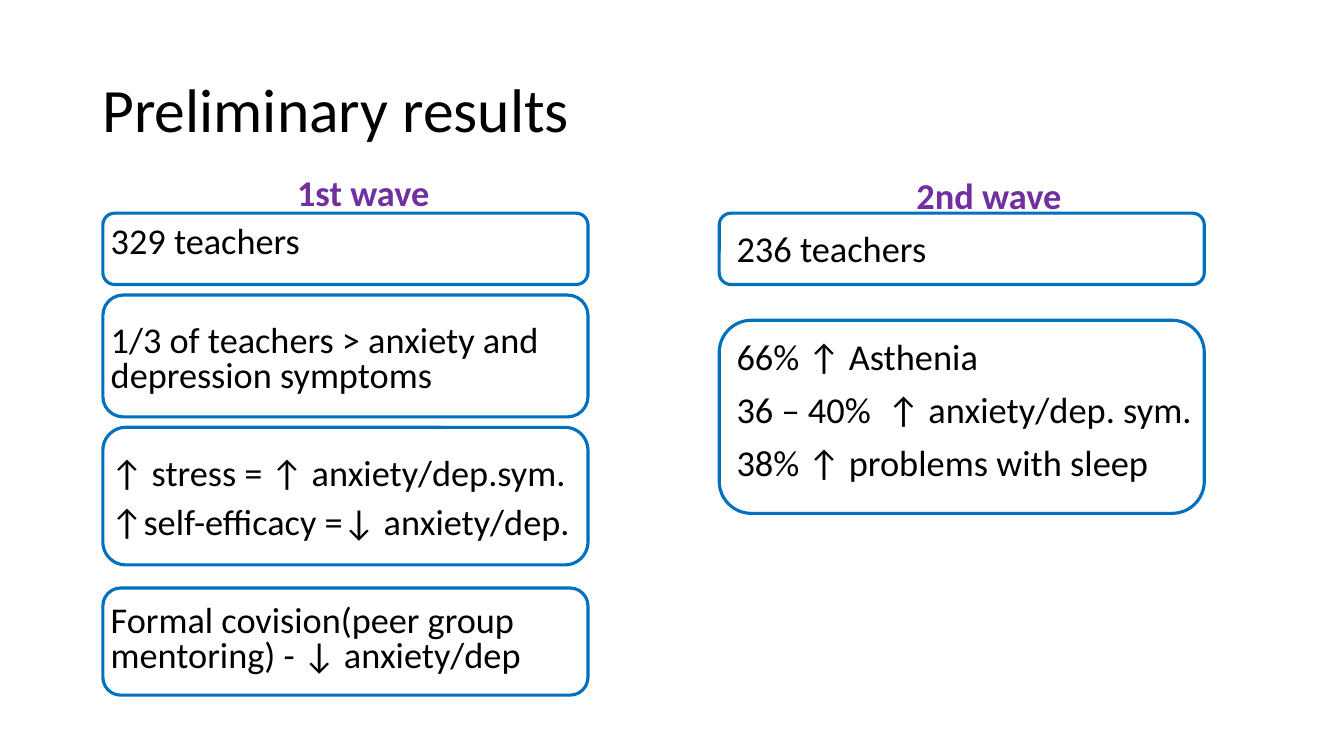
from dataclasses import dataclass

from pptx import Presentation
from pptx.dml.color import RGBColor
from pptx.enum.shapes import MSO_SHAPE
from pptx.enum.text import MSO_ANCHOR, MSO_AUTO_SIZE, PP_ALIGN
from pptx.slide import Slide
from pptx.text.text import TextFrame
from pptx.util import Emu, Pt

SCALE = 9525  # EMU in one px, at 96 px to the inch
FONT = "Calibri"
COLORS = {"ink": "000000", "wave": "7030A0", "frame": "0070C0"}
GAP = 10  # points above each line of text
FRAME_W = 462


@dataclass(frozen=True)
class Line:
    text: str
    group: bool = False  # opens a new group, set off by one line


@dataclass(frozen=True)
class Wave:
    title: str
    left: int
    high: int
    size: float
    pitch: float
    skip: float  # points above a new group
    lines: tuple[Line, ...]
    edge: int  # left side of the frames
    frames: tuple[tuple[int, int], ...]  # top and height


WAVES = (
    Wave("1st wave", 96, 519, 25.9, 0.8, 45.3, (
        Line("329 teachers"),
        Line("1/3 of teachers > anxiety and depression symptoms", True),
        Line("↑ stress = ↑ anxiety/dep.sym.", True),
        Line("↑self-efficacy =↓ anxiety/dep."),
        Line("Formal covision(peer group mentoring) - ↓ anxiety/dep", True),
    ), 98, ((203, 68), (281, 116), (407, 131), (560, 102))),
    Wave("2nd wave", 692, 484, 26, 0.9, 48.5, (
        Line("236 teachers"),
        Line("66% ↑ Asthenia", True),
        Line("36 – 40%  ↑ anxiety/dep. sym."),
        Line("38% ↑ problems with sleep"),
    ), 685, ((203, 68), (305, 184))),
)


def px(count: int) -> Emu:
    return Emu(count * SCALE)


def write(frame: TextFrame, text: str, *, size: float, color: str = "ink",
          bold: bool = False, align: PP_ALIGN = PP_ALIGN.LEFT,
          pitch: float = 0.9, above: float = 0, first: bool = False) -> None:
    para = frame.paragraphs[0] if first else frame.add_paragraph()
    para.alignment = align
    para.line_spacing = pitch
    para.space_before = Pt(above)
    run = para.add_run()
    run.text = text
    run.font.name = FONT
    run.font.size = Pt(size)
    run.font.bold = bold
    run.font.color.rgb = RGBColor.from_string(COLORS[color])


def add_title(slide: Slide, text: str) -> None:
    title = slide.shapes.title
    title.left, title.top = px(88), px(38)
    title.width, title.height = px(1104), px(139)
    frame = title.text_frame
    frame.auto_size = MSO_AUTO_SIZE.NONE
    frame.vertical_anchor = MSO_ANCHOR.MIDDLE
    write(frame, text, size=44, first=True)


def add_text(slide: Slide, wave: Wave) -> None:
    box = slide.shapes.add_textbox(px(wave.left), px(165), px(500), px(wave.high))
    frame = box.text_frame
    frame.word_wrap = True
    write(frame, wave.title, size=wave.size, color="wave", bold=True,
          align=PP_ALIGN.CENTER, pitch=wave.pitch, above=GAP, first=True)
    for line in wave.lines:
        write(frame, line.text, size=wave.size, pitch=wave.pitch,
              above=wave.skip if line.group else GAP)


def add_frames(slide: Slide, wave: Wave) -> None:
    for top, high in wave.frames:
        shape = slide.shapes.add_shape(MSO_SHAPE.ROUNDED_RECTANGLE, px(wave.edge),
                                       px(top), px(FRAME_W), px(high))
        shape.shadow.inherit = False
        shape.fill.background()
        shape.line.color.rgb = RGBColor.from_string(COLORS["frame"])
        shape.line.width = Pt(2.25)


def main() -> None:
    deck = Presentation()
    deck.slide_width, deck.slide_height = px(1280), px(720)
    slide = deck.slides.add_slide(deck.slide_layouts.get_by_name("Title Only"))

    # Title
    add_title(slide, "Preliminary results")

    # Text of both waves, then the frames over it
    for wave in WAVES:
        add_text(slide, wave)
    for wave in WAVES:
        add_frames(slide, wave)

    deck.save("out.pptx")


if __name__ == "__main__":
    main()
